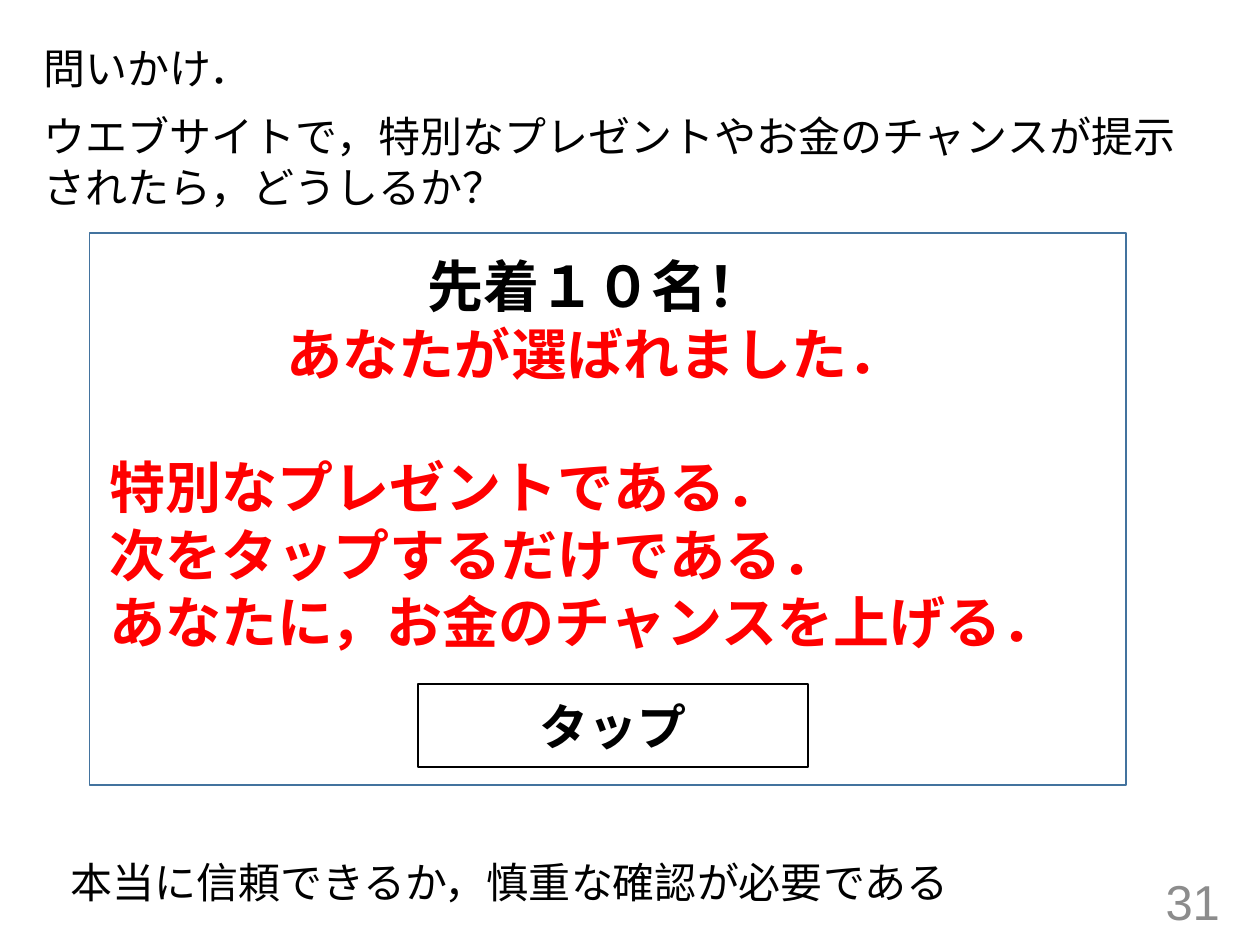
from dataclasses import dataclass

from pptx import Presentation
from pptx.dml.color import RGBColor
from pptx.enum.shapes import MSO_SHAPE
from pptx.enum.text import MSO_ANCHOR, PP_ALIGN
from pptx.util import Inches, Pt

LEFT, CENTER, RIGHT = PP_ALIGN.LEFT, PP_ALIGN.CENTER, PP_ALIGN.RIGHT
TOP, MIDDLE = MSO_ANCHOR.TOP, MSO_ANCHOR.MIDDLE
RECTANGLE = MSO_SHAPE.RECTANGLE
WIDTH, HEIGHT = Inches(10), Inches(7.5)


@dataclass(frozen=True)
class Theme:
    body_font: str = "Arial"
    offer_font: str = "Calibri"
    ink: str = "000000"
    alert: str = "FF0000"
    muted: str = "8C8C8C"
    frame: str = "43739E"
    body_size: int = 24
    label_size: int = 28
    offer_size: int = 32
    body_gap: int = 10
    offer_gap: int = 38


THEME = Theme()


def place(left, top, width, height):
    """Turn percentages of the slide into lengths."""
    return (int(WIDTH * left / 100), int(HEIGHT * top / 100),
            int(WIDTH * width / 100), int(HEIGHT * height / 100))


def write(frame, text, *, first=False, font=THEME.body_font, size=THEME.body_size,
          color=THEME.ink, bold=False, align=LEFT, before=0):
    paragraph = frame.paragraphs[0] if first else frame.add_paragraph()
    paragraph.alignment = align
    paragraph.space_before = Pt(before)
    run = paragraph.add_run()
    run.text = text
    run.font.name = font
    run.font.size = Pt(size)
    run.font.bold = bold
    run.font.color.rgb = RGBColor.from_string(color)


def add_text_area(slide, area, anchor=TOP):
    frame = slide.shapes.add_textbox(*place(*area)).text_frame
    frame.word_wrap = True
    frame.vertical_anchor = anchor
    return frame


def add_outline(slide, area, color):
    box = slide.shapes.add_shape(RECTANGLE, *place(*area))
    box.shadow.inherit = False
    box.fill.background()
    box.line.color.rgb = RGBColor.from_string(color)
    box.line.width = Pt(1)
    return box


def add_offer(slide):
    add_outline(slide, (7.1, 24.67, 82.3, 58.4), THEME.frame)
    offer = add_text_area(slide, (7.7, 26, 79.1, 51.6))
    style = dict(font=THEME.offer_font, size=THEME.offer_size, bold=True)

    # Headline
    write(offer, "先着１０名！", first=True, align=CENTER, **style)
    write(offer, "あなたが選ばれました．", align=CENTER, color=THEME.alert, **style)

    # Promises, set one line below the headline
    promises = ["特別なプレゼントである．", "次をタップするだけである．",
                "あなたに，お金のチャンスを上げる．"]
    for index, promise in enumerate(promises):
        write(offer, promise, color=THEME.alert,
              before=0 if index else THEME.offer_gap, **style)

    # Button
    button = add_outline(slide, (33.2, 72.4, 30.9, 8.8), THEME.ink).text_frame
    button.vertical_anchor = MIDDLE
    write(button, "タップ", first=True, font=THEME.offer_font,
          size=THEME.label_size, bold=True, align=CENTER)


def main():
    deck = Presentation()
    deck.slide_width, deck.slide_height = WIDTH, HEIGHT
    slide = deck.slides.add_slide(deck.slide_layouts[6])

    # Question
    question = add_text_area(slide, (2.5, 3.87, 92.5, 19.87))
    write(question, "問いかけ．", first=True)
    write(question, "ウエブサイトで，特別なプレゼントやお金のチャンスが提示されたら，どうしるか？",
          before=THEME.body_gap)

    # Mock offer
    add_offer(slide)

    # Advice
    advice = add_text_area(slide, (4.6, 90, 92.5, 10))
    write(advice, "本当に信頼できるか，慎重な確認が必要である", first=True)

    # Page number
    page = add_text_area(slide, (75.3, 92.67, 22.5, 5.33), anchor=MIDDLE)
    write(page, "31", first=True, size=THEME.label_size, color=THEME.muted, align=RIGHT)

    deck.save("out.pptx")


if __name__ == "__main__":
    main()
